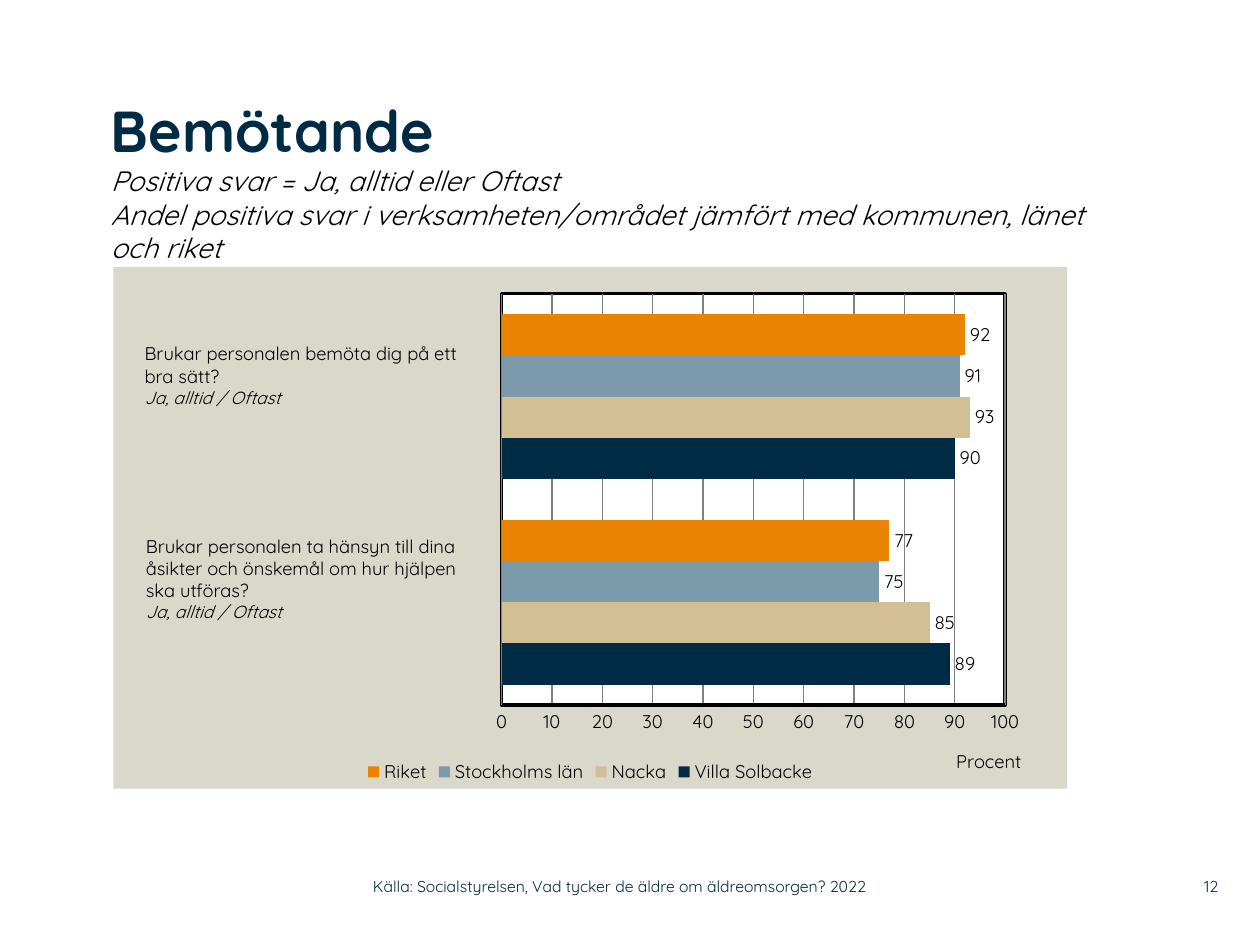
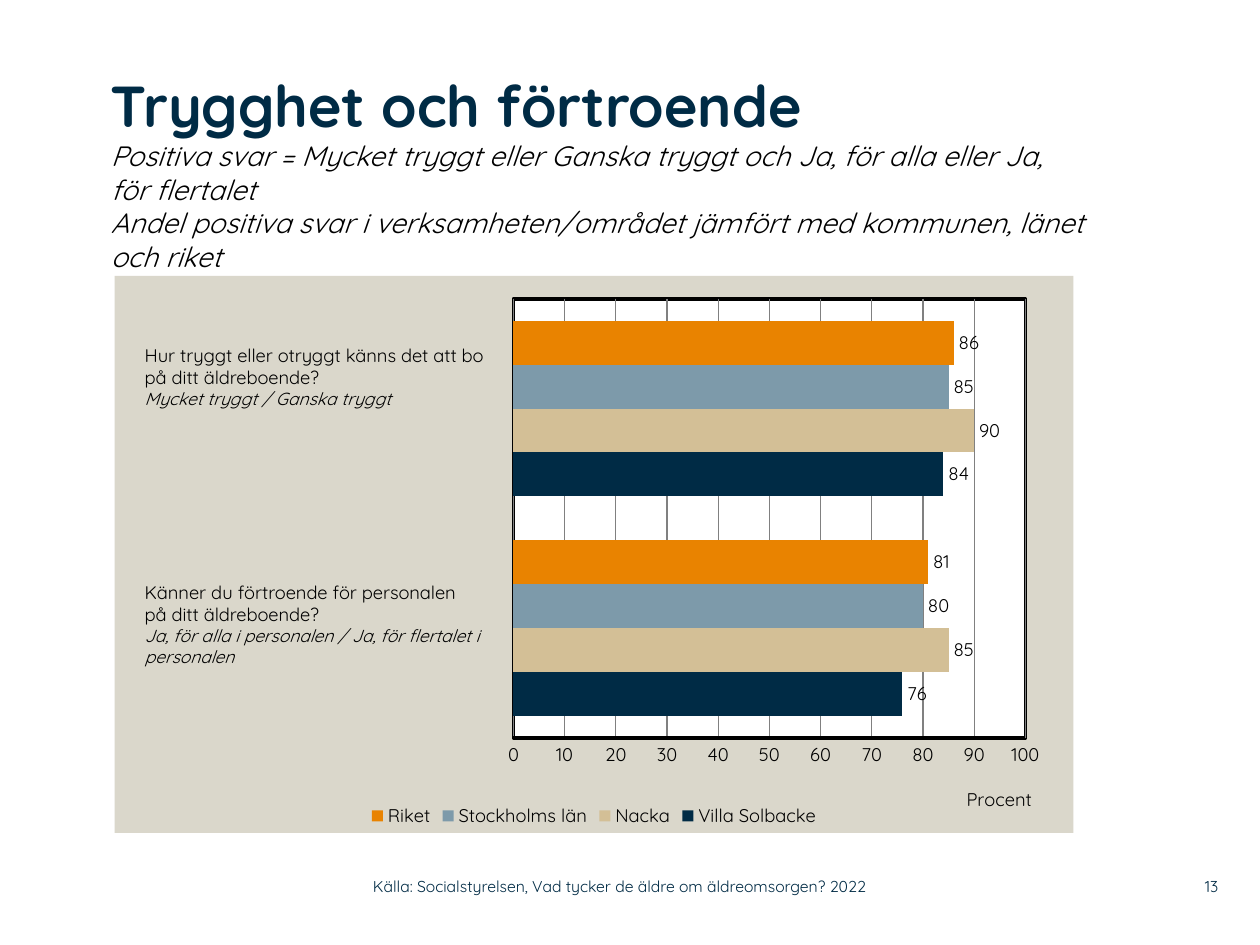
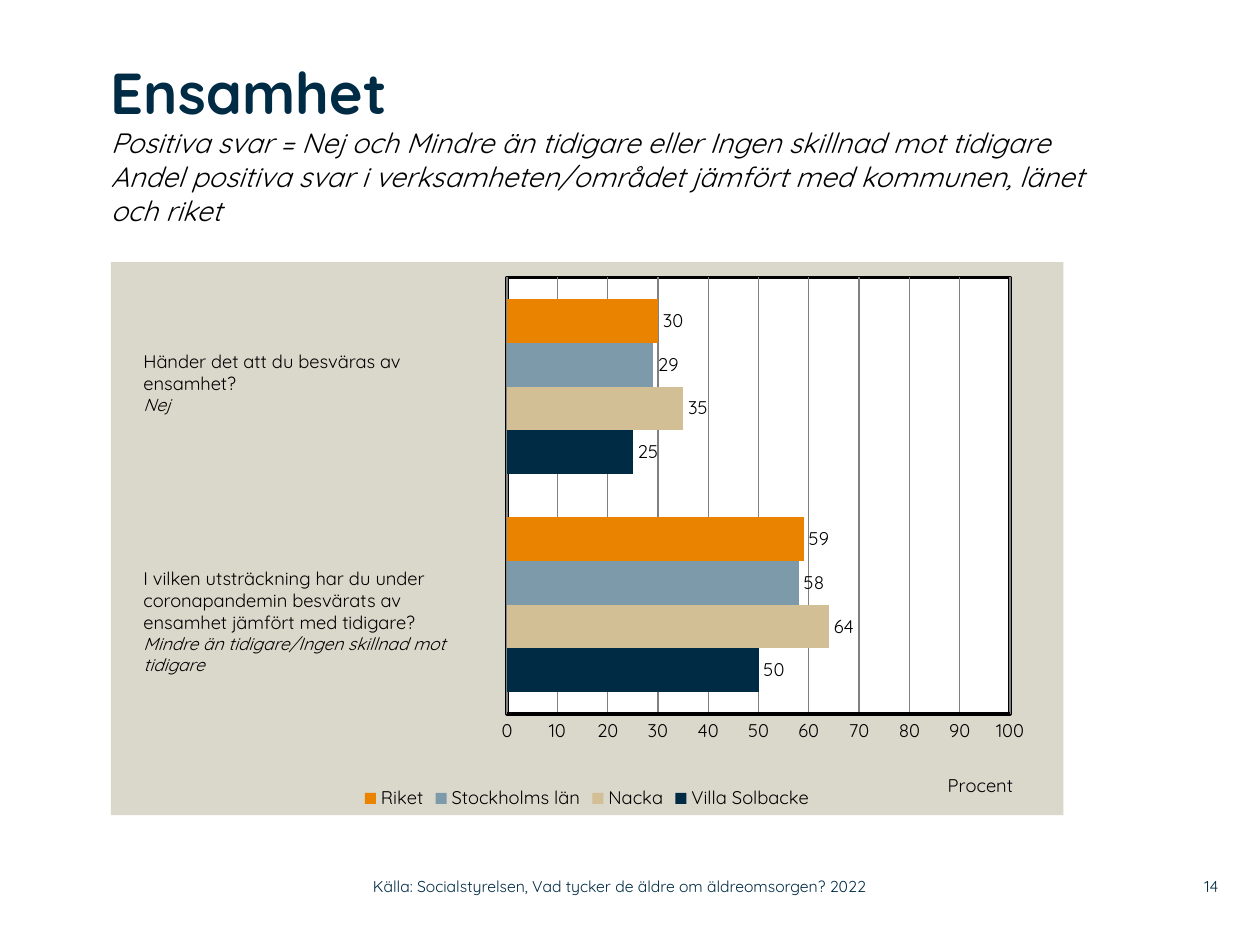
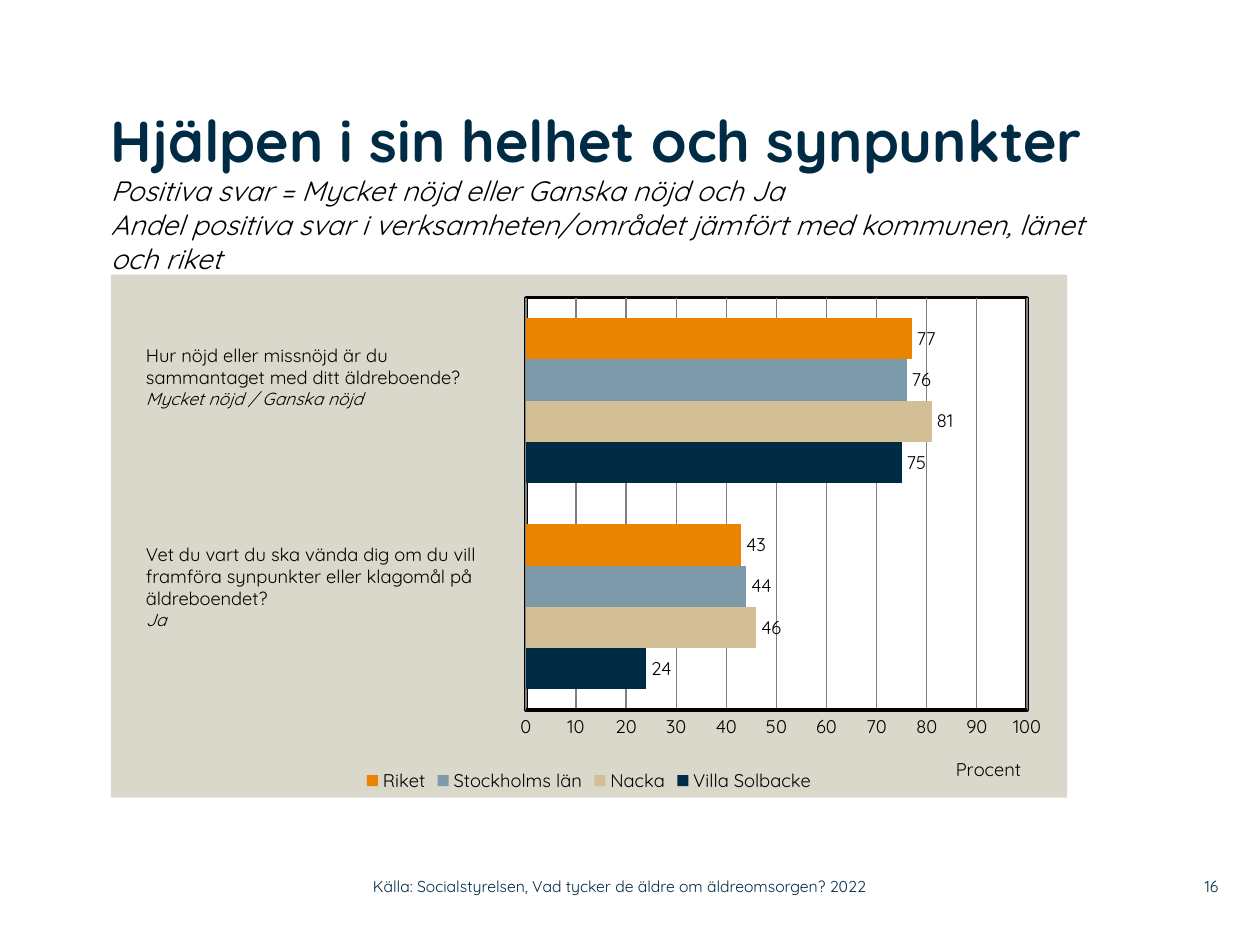
from copy import deepcopy
from pptx import Presentation
from pptx.chart.data import CategoryChartData as ChartData
from pptx.dml.color import RGBColor as RGB
from pptx.enum.chart import XL_CHART_TYPE as KIND, XL_LABEL_POSITION as SPOT
from pptx.enum.chart import XL_LEGEND_POSITION as SIDE, XL_TICK_MARK as TICK
from pptx.enum.text import MSO_ANCHOR as ANCHOR, MSO_AUTO_SIZE as FIT, PP_ALIGN as ALIGN
from pptx.oxml import parse_xml
from pptx.oxml.ns import nsdecls, qn
from pptx.util import Pt

PX = 9144  # 100 px to the inch
FONT = "Quicksand"
HEX = {"navy": "002B45", "black": "000000", "panel": "DAD7CB", "white": "FFFFFF",
       "sand": "D3BF96", "blue": "7D9AAA", "orange": "E98300", "grid": "808080"}
SERIES = [("Villa Solbacke", "navy"), ("Nacka", "sand"),
          ("Stockholms län", "blue"), ("Riket", "orange")]
SOURCE = "Källa: Socialstyrelsen, Vad tycker de äldre om äldreomsorgen? 2022"
SHARE = "Andel positiva svar i verksamheten/området jämfört med kommunen, länet och riket"

# Boxes are left, top, width, height; values run from the lower to the upper bar group
PAGES = [
    {"no": 12, "head": "Bemötande", "sub": "Positiva svar = Ja, alltid eller Oftast",
     "title": (88, 75, 804, 120), "chart": (90, 212, 757, 414),
     "plot": (0.407, 0.051, 0.528, 0.789), "unit": (0.88, 0.915),
     "vals": [(89, 90), (85, 93), (75, 91), (77, 92)],
     "asks": [
         ((105, 267, 297, 81), ["Brukar personalen bemöta dig på ett", "bra sätt?"],
          "Ja, alltid / Oftast"),
         ((106, 420, 301, 98), ["Brukar personalen ta hänsyn till dina",
                                "åsikter och önskemål om hur hjälpen", "ska utföras?"],
          "Ja, alltid / Oftast")]},
    {"no": 13, "head": "Trygghet och förtroende",
     "sub": "Positiva svar = Mycket tryggt eller Ganska tryggt och Ja, för alla eller Ja, "
            "för flertalet",
     "title": (88, 55, 775, 164), "chart": (91, 219, 761, 442),
     "plot": (0.416, 0.041, 0.534, 0.789), "unit": (0.885, 0.91),
     "vals": [(76, 84), (85, 90), (80, 85), (81, 86)],
     "asks": [
         ((105, 268, 298, 81),
          ["Hur tryggt eller otryggt känns det att bo på ditt äldreboende?"],
          "Mycket tryggt / Ganska tryggt"),
         ((105, 456, 300, 98),
          ["Känner du förtroende för personalen", "på ditt äldreboende?"],
          "Ja, för alla i personalen / Ja, för flertalet i personalen")]},
    {"no": 14, "head": "Ensamhet",
     "sub": "Positiva svar = Nej och Mindre än tidigare eller Ingen skillnad mot tidigare",
     "title": (88, 45, 781, 164), "chart": (88, 208, 756, 439),
     "plot": (0.416, 0.028, 0.528, 0.789), "unit": (0.875, 0.915),
     "vals": [(50, 25), (64, 35), (58, 29), (59, 30)],
     "asks": [
         ((104, 445, 294, 97),
          ["I vilken utsträckning har du under coronapandemin besvärats av ensamhet "
           "jämfört med tidigare?"],
          "Mindre än tidigare/Ingen skillnad mot tidigare"),
         ((104, 273, 294, 63), ["Händer det att du besväras av", "ensamhet?"], "Nej")]},
    {"no": 16, "head": "Hjälpen i sin helhet och synpunkter",
     "sub": "Positiva svar = Mycket nöjd eller Ganska nöjd och Ja",
     "title": (88, 83, 779, 134), "chart": (88, 218, 759, 415),
     "plot": (0.434, 0.044, 0.524, 0.789), "unit": (0.88, 0.915),
     "vals": [(24, 75), (46, 81), (44, 76), (43, 77)],
     "asks": [
         ((106, 268, 310, 81),
          ["Hur nöjd eller missnöjd är du", "sammantaget med ditt äldreboende?"],
          "Mycket nöjd / Ganska nöjd"),
         ((106, 426, 305, 81),
          ["Vet du vart du ska vända dig om du vill framföra synpunkter eller klagomål "
           "på äldreboendet?"], "Ja")]},
]


def write(para, text, size, color="black", bold=False, italic=False):
    run = para.add_run()
    run.text = text
    font = run.font
    font.name, font.size, font.bold, font.italic = FONT, Pt(size), bold, italic
    font.color.rgb = RGB.from_string(HEX[color])
    return run


def place(part, at, index, inner=""):
    """Give a chart part a fixed place, in shares of the chart."""
    for old in part.findall(qn("c:layout")):
        part.remove(old)
    modes = "".join(f'<c:{n}Mode val="edge"/>' for n in "xy")
    sizes = "".join(f'<c:{n} val="{v}"/>' for n, v in zip("xywh", at))
    part.insert(index, parse_xml(
        f'<c:layout {nsdecls("c")}><c:manualLayout>{inner}{modes}{sizes}'
        '</c:manualLayout></c:layout>'))


deck = Presentation()
deck.slide_width, deck.slide_height = 1000 * PX, 750 * PX

for page in PAGES:
    slide = deck.slides.add_slide(deck.slide_layouts[5])

    # Title with its italic subtitle lines
    title = slide.shapes.title
    title.left, title.top, title.width, title.height = [v * PX for v in page["title"]]
    frame = title.text_frame
    frame.word_wrap, frame.auto_size, frame.vertical_anchor = True, FIT.NONE, ANCHOR.TOP
    frame.margin_left = frame.margin_top = frame.margin_right = frame.margin_bottom = 0
    para = frame.paragraphs[0]
    para.alignment = ALIGN.LEFT
    run = write(para, page["head"], 33, "navy", bold=True)
    for line in (page["sub"], SHARE):
        para.add_line_break()
        para._p[-1].append(deepcopy(run._r.rPr))
        run = write(para, line, 16, italic=True)

    # Chart
    data = ChartData()
    data.categories = ["1", "2"]
    for (name, _), vals in zip(SERIES, page["vals"]):
        data.add_series(name, vals)
    chart = slide.shapes.add_chart(
        KIND.BAR_CLUSTERED, *[v * PX for v in page["chart"]], data).chart
    chart.has_title = False
    chart.font.name, chart.font.size = FONT, Pt(10.5)
    chart.font.color.rgb = RGB.from_string(HEX["black"])
    chart.has_legend = True
    chart.legend.position, chart.legend.include_in_layout = SIDE.BOTTOM, False

    bars = chart.plots[0]
    bars.gap_width, bars.vary_by_categories = 100, False
    for row, (_, color) in zip(bars.series, SERIES):
        row.format.fill.solid()
        row.format.fill.fore_color.rgb = RGB.from_string(HEX[color])
        row.data_labels.show_value = True
        row.data_labels.position = SPOT.OUTSIDE_END

    # Axes
    chart.category_axis.visible = False
    axis = chart.value_axis
    axis.minimum_scale, axis.maximum_scale, axis.major_unit = 0, 100, 10
    axis.major_tick_mark = axis.minor_tick_mark = TICK.NONE
    axis.has_major_gridlines = True
    grid = axis.major_gridlines.format.line
    for line, color, width in ((axis.format.line, "black", 2), (grid, "grid", 0.75)):
        line.width = Pt(width)
        line.color.rgb = RGB.from_string(HEX[color])
    axis.has_title = True
    write(axis.axis_title.text_frame.paragraphs[0], "Procent", 10.5)
    place(axis.axis_title._element, page["unit"], 1)

    # Chart panel and framed plot
    space = chart._chartSpace
    area = space.find(".//" + qn("c:plotArea"))
    place(area, page["plot"], 0, '<c:layoutTarget val="inner"/>')
    fill = '<a:solidFill><a:srgbClr val="{}"/></a:solidFill>'.format
    look = f'<c:spPr {nsdecls("c", "a")}>{{}}<a:ln w="{Pt(2)}">{{}}</a:ln></c:spPr>'
    area.append(parse_xml(look.format(fill(HEX["white"]), fill(HEX["black"]))))
    space.find(qn("c:chart")).addnext(
        parse_xml(look.format(fill(HEX["panel"]), "<a:noFill/>")))

    # Questions beside the bars
    for box, lines, answer in page["asks"]:
        frame = slide.shapes.add_textbox(*[v * PX for v in box]).text_frame
        frame.word_wrap = True
        para = frame.paragraphs[0]
        for line in lines:
            write(para, line, 10.5)
            para = frame.add_paragraph()
        write(para, answer, 10, italic=True)

    # Source and page number
    for left, width, text, side in ((296, 443, SOURCE, ALIGN.LEFT),
                                    (920, 47, str(page["no"]), ALIGN.RIGHT)):
        frame = slide.shapes.add_textbox(left * PX, 689 * PX, width * PX, 29 * PX).text_frame
        frame.word_wrap, frame.vertical_anchor = True, ANCHOR.MIDDLE
        frame.margin_left = frame.margin_top = frame.margin_right = frame.margin_bottom = 0
        frame.paragraphs[0].alignment = side
        write(frame.paragraphs[0], text, 9, "navy")

deck.save("out.pptx")
